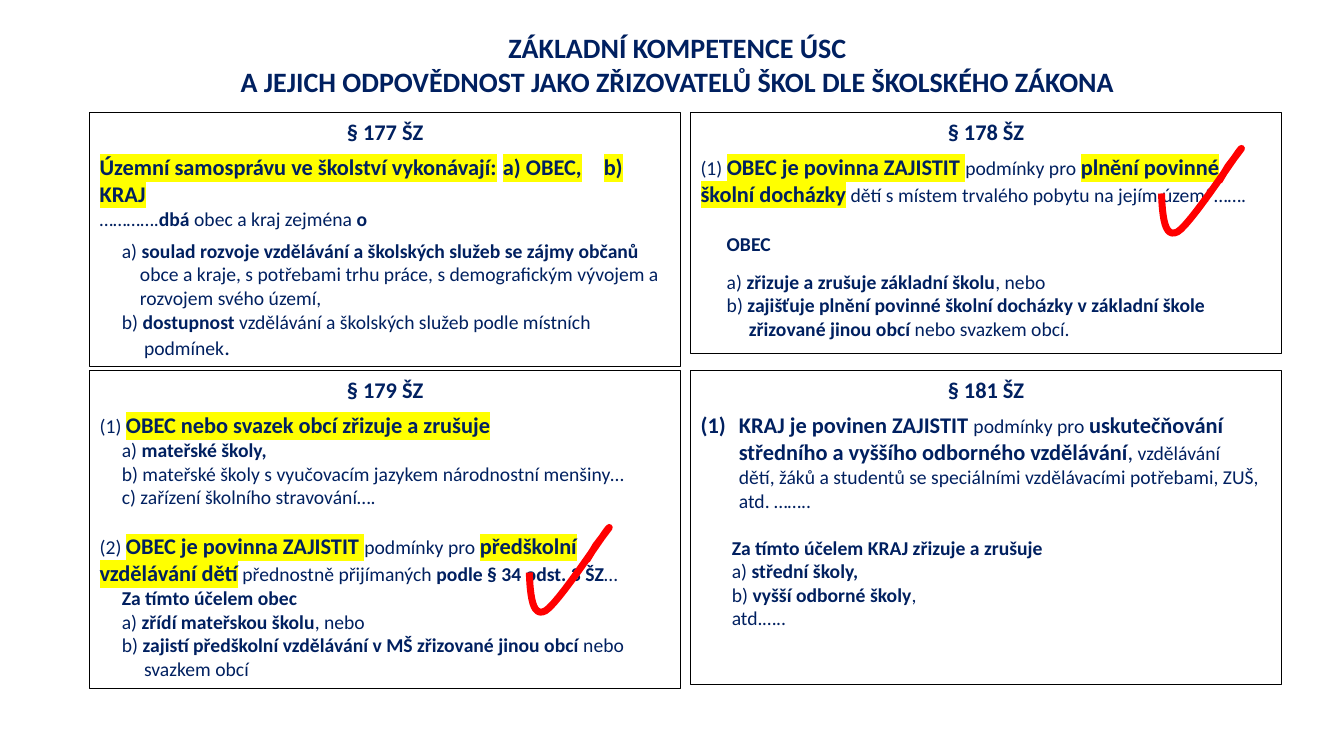
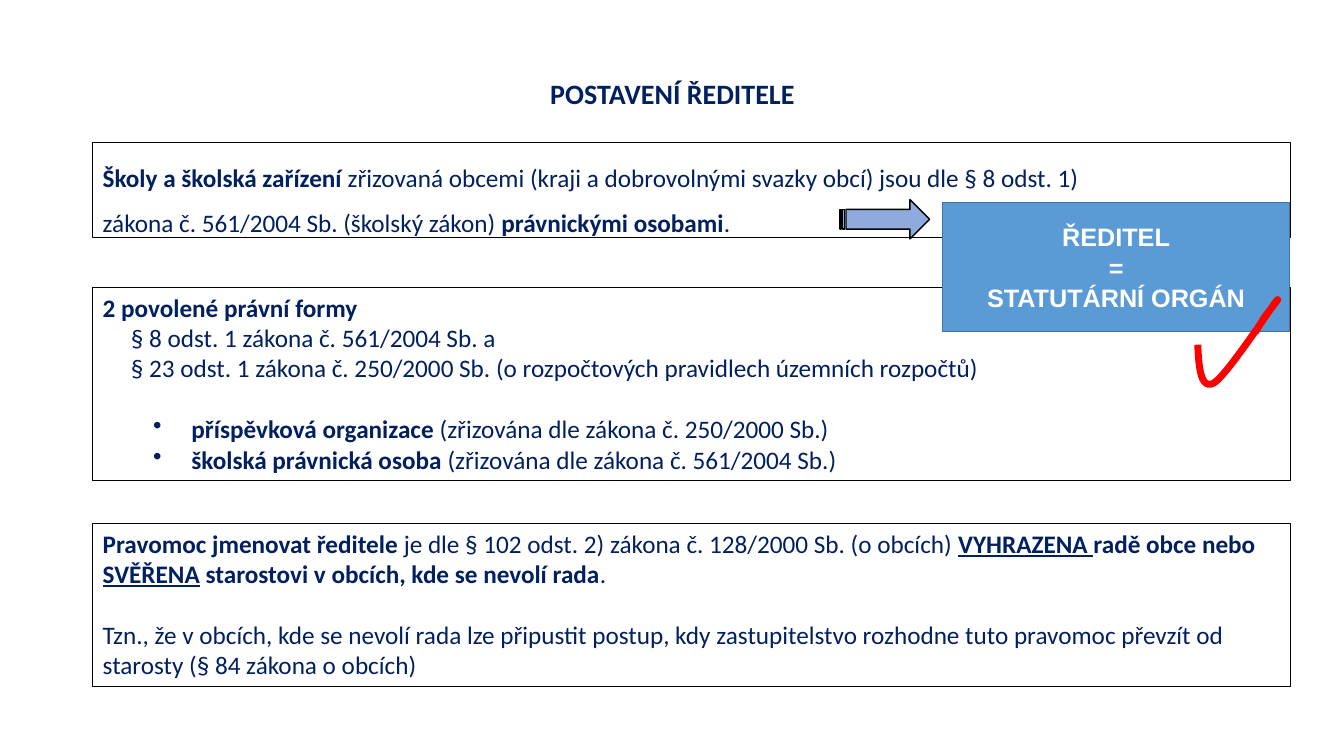
from dataclasses import dataclass
from typing import Optional

from lxml.etree import SubElement
from pptx import Presentation
from pptx.dml.color import RGBColor
from pptx.enum.shapes import MSO_SHAPE
from pptx.enum.text import MSO_ANCHOR, MSO_AUTO_SIZE, PP_ALIGN
from pptx.oxml.ns import qn
from pptx.util import Inches, Pt

NAVY = RGBColor(0x00, 0x20, 0x60)
BLACK = RGBColor(0x00, 0x00, 0x00)
WHITE = RGBColor(0xFF, 0xFF, 0xFF)
RED = RGBColor(0xFF, 0x00, 0x00)
YELLOW = RGBColor(0xFF, 0xFF, 0x00)
BLUE = RGBColor(0x5B, 0x9B, 0xD5)
DARK_BLUE = RGBColor(0x43, 0x73, 0x9E)
LIGHT_BLUE = RGBColor(0x8F, 0xAA, 0xDC)

TICK_START = (0, 0.45)
TICK_CURVES = (
    ((0.01, 0.68), (0.03, 0.9), (0.16, 0.83)),
    ((0.28, 0.76), (0.69, 0.14), (0.77, 0.03)),
    ((0.86, -0.08), (0.66, 0.18), (0.66, 0.18)),
)
TICK_END = (0.57, 0.33)
CURVE_STEPS = 12


@dataclass
class Words:
    text: str
    bold: bool = False
    size: Optional[int] = None
    underline: bool = False
    highlight: Optional[RGBColor] = None


@dataclass
class Block:
    words: list
    left: float = 0
    hanging: float = 0
    right: float = 0
    before: float = 0
    spacing: float = 1
    align: PP_ALIGN = PP_ALIGN.LEFT
    bullet: Optional[tuple] = None
    tabs: tuple = ()


def plain(text):
    return Words(text)


def strong(text, size=None):
    return Words(text, True, size)


def underlined(text):
    return Words(text, True, underline=True)


def marked(text):
    return Words(text, True, 16, highlight=YELLOW)


def heading(text):
    return Block([strong(text, 16)], align=PP_ALIGN.CENTER)


def curve_points(start, curves):
    for first, second, end in curves:
        for step in range(1, CURVE_STEPS + 1):
            t = step / CURVE_STEPS
            weights = ((1 - t) ** 3, 3 * t * (1 - t) ** 2, 3 * t * t * (1 - t), t ** 3)
            points = (start, first, second, end)
            yield tuple(sum(w * p[axis] for w, p in zip(weights, points)) for axis in (0, 1))
        start = end


class Deck:
    font_name = "Calibri"

    def __init__(self):
        self.presentation = Presentation()
        self.presentation.slide_width = Inches(13.33)
        self.presentation.slide_height = Inches(7.5)
        self.slide = None

    def add_slide(self, title, left, top, width, height):
        layout = self.presentation.slide_layouts[5]
        self.slide = self.presentation.slides.add_slide(layout)
        shape = self.slide.shapes.title
        shape.left, shape.top = Inches(left), Inches(top)
        shape.width, shape.height = Inches(width), Inches(height)
        text_frame = shape.text_frame
        text_frame.text = title
        text_frame.auto_size = MSO_AUTO_SIZE.NONE
        text_frame.vertical_anchor = MSO_ANCHOR.MIDDLE
        for paragraph in text_frame.paragraphs:
            paragraph.alignment = PP_ALIGN.CENTER
            for run in paragraph.runs:
                self.format_font(run.font, 20, NAVY, True)

    def format_font(self, font, size, color, bold, name=font_name):
        font.size = Pt(size)
        font.bold = bold
        font.name = name
        font.color.rgb = color

    def shape(self, kind, left, top, width, height, fill, line, line_width):
        shape = self.slide.shapes.add_shape(
            kind, Inches(left), Inches(top), Inches(width), Inches(height))
        shape.shadow.inherit = False
        if fill is None:
            shape.fill.background()
        else:
            shape.fill.solid()
            shape.fill.fore_color.rgb = fill
        shape.line.color.rgb = line
        shape.line.width = Pt(line_width)
        return shape

    def panel(self, left, top, width, height, blocks, size, fill=None):
        shape = self.shape(MSO_SHAPE.RECTANGLE, left, top, width, height, fill, BLACK, 0.75)
        text_frame = shape.text_frame
        text_frame.word_wrap = True
        text_frame.vertical_anchor = MSO_ANCHOR.TOP
        for index, block in enumerate(blocks):
            paragraph = text_frame.add_paragraph() if index else text_frame.paragraphs[0]
            self.fill_paragraph(paragraph, block, size)

    def fill_paragraph(self, paragraph, block, size):
        paragraph.alignment = block.align
        paragraph.line_spacing = block.spacing
        paragraph.space_before = Pt(block.before)
        properties = paragraph._p.get_or_add_pPr()
        properties.set("marL", str(Inches(block.left)))
        properties.set("marR", str(Inches(block.right)))
        properties.set("indent", str(Inches(block.hanging)))
        if block.bullet:
            tag, attribute, value = block.bullet
            SubElement(properties, qn(tag)).set(attribute, value)
        if block.tabs:
            tab_list = SubElement(properties, qn("a:tabLst"))
            for position in block.tabs:
                SubElement(tab_list, qn("a:tab"), pos=str(Inches(position)), algn="l")
        for words in block.words:
            run = paragraph.add_run()
            run.text = words.text
            self.format_font(run.font, words.size or size, NAVY, words.bold)
            run.font.underline = words.underline
            if words.highlight is not None:
                fill = run._r.get_or_add_rPr().find(qn("a:solidFill"))
                highlight = fill.makeelement(qn("a:highlight"))
                SubElement(highlight, qn("a:srgbClr")).set("val", str(words.highlight))
                fill.addnext(highlight)

    def callout(self, left, top, width, height, text):
        shape = self.shape(MSO_SHAPE.RECTANGLE, left, top, width, height, BLUE, DARK_BLUE, 1)
        text_frame = shape.text_frame
        text_frame.text = text
        text_frame.word_wrap = True
        text_frame.vertical_anchor = MSO_ANCHOR.MIDDLE
        for paragraph in text_frame.paragraphs:
            paragraph.alignment = PP_ALIGN.CENTER
            for run in paragraph.runs:
                self.format_font(run.font, 18, WHITE, True, "Arial")

    def arrow(self, left, top, width, height):
        self.shape(MSO_SHAPE.STRIPED_RIGHT_ARROW, left, top, width, height, LIGHT_BLUE, BLACK, 1)

    def tick(self, left, top):
        points = [TICK_START, *curve_points(TICK_START, TICK_CURVES), TICK_END]
        start, *others = [(Inches(left + x), Inches(top + y)) for x, y in points]
        builder = self.slide.shapes.build_freeform(*start)
        builder.add_line_segments(others, close=False)
        shape = builder.convert_to_shape()
        shape.shadow.inherit = False
        shape.fill.background()
        shape.line.color.rgb = RED
        shape.line.width = Pt(5)


def add_competences(deck):
    deck.add_slide(
        "ZÁKLADNÍ KOMPETENCE ÚSC\n"
        "A JEJICH ODPOVĚDNOST JAKO ZŘIZOVATELŮ ŠKOL DLE ŠKOLSKÉHO ZÁKONA",
        0.89, 0.25, 11.66, 0.77)
    section_177 = [
        heading("§ 177 ŠZ"),
        Block([marked("Územní samosprávu ve školství vykonávají:\ta) OBEC,\tb) KRAJ")],
              before=6, tabs=(4.14, 5.17)),
        Block([plain("…………."), strong("dbá "), plain("obec a kraj zejména "), strong("o")]),
        Block([plain("a) "),
               strong("soulad rozvoje vzdělávání a školských služeb se zájmy občanů "),
               plain("obce a kraje, s potřebami trhu práce, s demografickým vývojem a "
                     "rozvojem svého území,")],
              left=0.4, hanging=-0.18, before=6),
        Block([plain("b) "), strong("dostupnost"),
               plain(" vzdělávání a školských služeb podle místních podmínek"),
               Words(".", size=16)],
              left=0.44, hanging=-0.22, right=0.45),
    ]
    section_178 = [
        heading("§ 178 ŠZ"),
        Block([plain("(1) "), marked("OBEC je povinna ZAJISTIT "), plain("podmínky pro "),
               marked("plnění povinné školní docházky"),
               plain(" dětí s místem trvalého pobytu na jejím území …….")], before=6),
        Block([strong("OBEC")], left=0.26, before=18),
        Block([plain("a) "), strong("zřizuje a zrušuje základní školu"), plain(", nebo")],
              left=0.48, hanging=-0.22, before=10),
        Block([plain("b) "),
               strong("zajišťuje plnění povinné školní docházky v základní škole "
                      "zřizované jinou obcí "),
               plain("nebo svazkem obcí.")], left=0.48, hanging=-0.22),
    ]
    section_179 = [
        heading("§ 179 ŠZ"),
        Block([plain("(1) "), marked("OBEC nebo svazek obcí zřizuje a zrušuje")], before=6),
        Block([plain("a) "), strong("mateřské školy,")], left=0.22),
        Block([plain("b) mateřské školy s vyučovacím jazykem národnostní menšiny…")], left=0.22),
        Block([plain("c) zařízení školního stravování….")], left=0.22),
        Block([plain("(2) "), marked("OBEC je povinna ZAJISTIT "), plain("podmínky pro "),
               marked("předškolní vzdělávání dětí"), plain(" přednostně přijímaných "),
               strong("podle § 34 odst. 3 ŠZ"), plain("…")], before=17),
        Block([strong("Za tímto účelem obec")], left=0.22),
        Block([plain("a) "), strong("zřídí mateřskou školu"), plain(", nebo")], left=0.22),
        Block([plain("b) "), strong("zajistí předškolní vzdělávání v MŠ zřizované jinou obcí"),
               plain(" nebo svazkem obcí")], left=0.44, hanging=-0.22),
    ]
    children_and_pupils = chr(160).join(("dětí,", "žáků"))
    section_181 = [
        heading("§ 181 ŠZ"),
        Block([strong("KRAJ je povinen ZAJISTIT ", 16), plain("podmínky pro "),
               strong("uskutečňování středního a vyššího odborného vzdělávání", 16),
               Words(",", size=16),
               plain(f" vzdělávání {children_and_pupils} a studentů se speciálními "
                     "vzdělávacími potřebami, ZUŠ, atd. ……..")],
              left=0.38, hanging=-0.38, before=6,
              bullet=("a:buAutoNum", "type", "arabicParenBoth")),
        Block([strong("Za tímto účelem KRAJ zřizuje a zrušuje")], left=0.31, before=17),
        Block([plain("a) "), strong("střední školy,")], left=0.31),
        Block([plain("b) "), strong("vyšší odborné školy"), plain(",")], left=0.31),
        Block([plain("atd.…..")], left=0.31),
    ]
    for left, top, height, blocks in (
        (6.85, 1.12, 2.39, section_178),
        (0.89, 1.12, 2.52, section_177),
        (0.89, 3.68, 3.15, section_179),
        (6.85, 3.68, 3.11, section_181),
    ):
        deck.panel(left, top, 5.86, height, blocks, 14, WHITE)
    deck.tick(11.52, 1.47)
    deck.tick(5.25, 5.23)


def add_headmaster(deck):
    deck.add_slide("POSTAVENÍ ŘEDITELE", 0.92, 0.55, 11.5, 0.76)
    dot = ("a:buChar", "char", "•")
    legal_entities = [
        Block([strong("Školy a školská zařízení "),
               plain("zřizovaná obcemi (kraji a dobrovolnými svazky obcí) jsou dle "
                     "§ 8 odst. 1) zákona č. 561/2004 Sb. (školský zákon) "),
               strong("právnickými osobami"), plain(".")], right=1.6, spacing=1.5),
    ]
    legal_forms = [
        Block([strong("2 povolené právní formy")]),
        Block([plain("§ 8 odst. 1 zákona č. 561/2004 Sb. a")], left=0.28),
        Block([plain("§ 23 odst. 1 zákona č. 250/2000 Sb. "
                     "(o rozpočtových pravidlech územních rozpočtů)")], left=0.28),
        Block([strong("příspěvková organizace"), plain(" (zřizována dle zákona č. 250/2000 Sb.)")],
              left=0.88, hanging=-0.38, before=22, bullet=dot),
        Block([strong("školská právnická osoba "), plain("(zřizována dle zákona č. 561/2004 Sb.)")],
              left=0.88, hanging=-0.38, bullet=dot),
    ]
    appointment = [
        Block([strong("Pravomoc jmenovat ředitele "),
               plain("je dle § 102 odst. 2) zákona č. 128/2000 Sb. (o obcích) "),
               underlined("VYHRAZENA "), strong("radě obce nebo "), underlined("SVĚŘENA"),
               strong(" starostovi v obcích, kde se nevolí rada"), plain(".")]),
        Block([plain("Tzn., že v obcích, kde se nevolí rada lze připustit postup, kdy "
                     "zastupitelstvo rozhodne tuto pravomoc převzít od starosty "
                     "(§ 84 zákona o obcích)")], before=22),
    ]
    for top, height, blocks in (
        (1.41, 0.95, legal_entities),
        (2.85, 1.92, legal_forms),
        (5.19, 1.62, appointment),
    ):
        deck.panel(0.92, top, 11.88, height, blocks, 18)
    deck.arrow(8.33, 1.98, 0.89, 0.39)
    deck.callout(9.35, 2.01, 3.44, 1.28, "ŘEDITEL\n=\nSTATUTÁRNÍ ORGÁN")
    deck.tick(11.88, 2.97)


def main():
    deck = Deck()
    add_competences(deck)
    add_headmaster(deck)
    deck.presentation.save("out.pptx")


if __name__ == "__main__":
    main()
